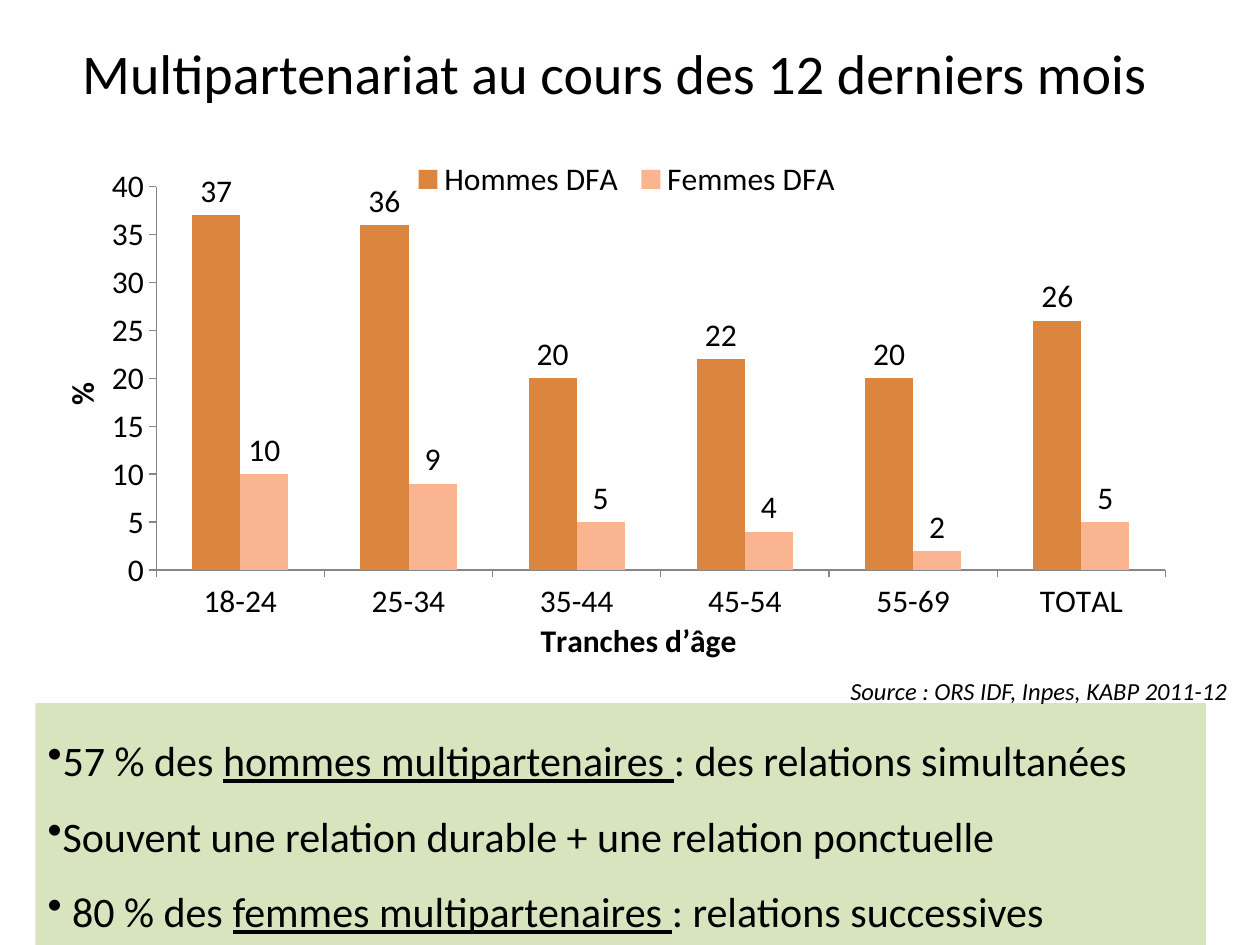
from lxml.etree import SubElement
from pptx import Presentation
from pptx.chart.data import CategoryChartData
from pptx.dml.color import RGBColor
from pptx.enum.chart import XL_CHART_TYPE as ChartType, XL_LABEL_POSITION as LabelPos
from pptx.enum.chart import XL_LEGEND_POSITION as LegendPos, XL_TICK_MARK as Tick
from pptx.enum.shapes import MSO_SHAPE as Shape
from pptx.enum.text import MSO_ANCHOR as Anchor, PP_ALIGN as Align
from pptx.oxml import parse_xml
from pptx.oxml.ns import nsdecls, qn
from pptx.util import Inches, Pt

WIDTH, HEIGHT = Inches(10), Inches(7.5)
FONT = "Calibri"
COLORS = {"text": "000000", "men": "DC853E", "women": "FAB590",
          "panel": "D7E4BD", "axis": "868686"}
AGES = ["18-24", "25-34", "35-44", "45-54", "55-69", "TOTAL"]
RATES = {"Hommes DFA": ("men", [37, 36, 20, 22, 20, 26]),
         "Femmes DFA": ("women", [10, 9, 5, 4, 2, 5])}
FINDINGS = [
    [("57 % des ", False), ("hommes multipartenaires ", True),
     (": des relations simultanées", False)],
    [("Souvent une relation durable + une relation ponctuelle", False)],
    [(" 80 % des ", False), ("femmes multipartenaires ", True),
     (": relations successives", False)],
]


def color(key):
    """Return the named colour."""
    return RGBColor.from_string(COLORS[key])


def place(left, top, width, height):
    """Turn shares of the slide into lengths."""
    return (int(left * WIDTH), int(top * HEIGHT),
            int(width * WIDTH), int(height * HEIGHT))


def set_font(font, size, **extra):
    """Apply the common font and any extra format values."""
    for name, value in {"name": FONT, "size": Pt(size), **extra}.items():
        setattr(font, name, value)
    font.color.rgb = color("text")


def add_label(slide, box, text, size, frame_format, align=Align.LEFT, **extra):
    """Add a single-line text box."""
    frame = slide.shapes.add_textbox(*place(*box)).text_frame
    for name, value in {"word_wrap": True, **frame_format}.items():
        setattr(frame, name, value)
    paragraph = frame.paragraphs[0]
    paragraph.alignment = align
    run = paragraph.add_run()
    run.text = text
    set_font(run.font, size, **extra)


def add_findings(slide, box):
    """Add the filled panel with its bulleted findings."""
    panel = slide.shapes.add_shape(Shape.RECTANGLE, *place(*box))
    panel.shadow.inherit = False
    panel.fill.solid()
    panel.fill.fore_color.rgb = color("panel")
    panel.line.fill.background()
    frame = panel.text_frame
    frame.word_wrap = True
    frame.vertical_anchor = Anchor.TOP
    for index, finding in enumerate(FINDINGS):
        paragraph = frame.add_paragraph() if index else frame.paragraphs[0]
        paragraph.alignment = Align.LEFT
        paragraph.line_spacing = 1.5
        SubElement(paragraph._p.get_or_add_pPr(), qn("a:buChar"), char="•")
        for text, underlined in finding:
            run = paragraph.add_run()
            run.text = text
            set_font(run.font, 24, underline=underlined)


def set_layout(element, x, y, w, h, target=""):
    """Fix the place of a chart part in shares of the chart."""
    for old in element.findall(qn("c:layout")):
        element.remove(old)
    sizes = "".join(f'<c:{tag} val="{value}"/>'
                    for tag, value in zip("xywh", (x, y, w, h)))
    layout = parse_xml(
        f'<c:layout {nsdecls("c")}><c:manualLayout>{target}'
        f'<c:xMode val="edge"/><c:yMode val="edge"/>{sizes}'
        "</c:manualLayout></c:layout>")
    before = element.find(qn("c:legendPos"))
    element.insert(0 if before is None else element.index(before) + 1, layout)


def style_axis(axis, title):
    """Give an axis its title, ticks and line."""
    frame = axis.axis_title.text_frame
    frame.text = title
    set_font(frame.paragraphs[0].runs[0].font, 18, bold=True)
    for name, value in {"has_major_gridlines": False, "major_tick_mark": Tick.OUTSIDE,
                        "minor_tick_mark": Tick.NONE}.items():
        setattr(axis, name, value)
    axis.format.line.color.rgb = color("axis")
    axis.format.line.width = Pt(0.75)


def add_rates_chart(slide, box):
    """Add the column chart of rates by age group."""
    data = CategoryChartData()
    data.categories = AGES
    for name, (_, values) in RATES.items():
        data.add_series(name, values)
    chart = slide.shapes.add_chart(
        ChartType.COLUMN_CLUSTERED, *place(*box), data).chart
    set_font(chart.font, 18)
    chart.has_title = False
    chart.has_legend = True
    chart.legend.position = LegendPos.TOP
    chart.legend.include_in_layout = False
    set_layout(chart.legend._element, 0.31, 0.03, 0.39, 0.07)
    set_layout(chart._chartSpace.chart.plotArea, 0.09, 0.08, 0.89, 0.73,
               '<c:layoutTarget val="inner"/>')
    style_axis(chart.category_axis, "Tranches d’âge")
    style_axis(chart.value_axis, "%")
    for name, value in {"minimum_scale": 0, "maximum_scale": 40, "major_unit": 5}.items():
        setattr(chart.value_axis, name, value)
    plot = chart.plots[0]
    for name, value in {"gap_width": 150, "overlap": 0, "vary_by_categories": False,
                        "has_data_labels": True}.items():
        setattr(plot, name, value)
    plot.data_labels.show_value = True
    plot.data_labels.position = LabelPos.OUTSIDE_END
    set_font(plot.data_labels.font, 18)
    for series, (key, _) in zip(plot.series, RATES.values()):
        series.format.fill.solid()
        series.format.fill.fore_color.rgb = color(key)


def main():
    """Build and save the slide."""
    deck = Presentation()
    deck.slide_width, deck.slide_height = WIDTH, HEIGHT
    slide = deck.slides.add_slide(deck.slide_layouts[6])
    add_label(slide, (0, 0, 0.976, 0.132), "Multipartenariat au cours des 12 derniers mois",
              32, {"vertical_anchor": Anchor.MIDDLE, "margin_top": Inches(0.2)}, Align.CENTER)
    add_rates_chart(slide, (0.043, 0.153, 0.9, 0.556))
    add_findings(slide, (0.028, 0.744, 0.929, 0.256))
    add_label(slide, (0.665, 0.709, 0.335, 0.045), "Source : ORS IDF, Inpes, KABP 2011-12",
              14, {"vertical_anchor": Anchor.TOP}, italic=True)
    deck.save("out.pptx")


if __name__ == "__main__":
    main()
